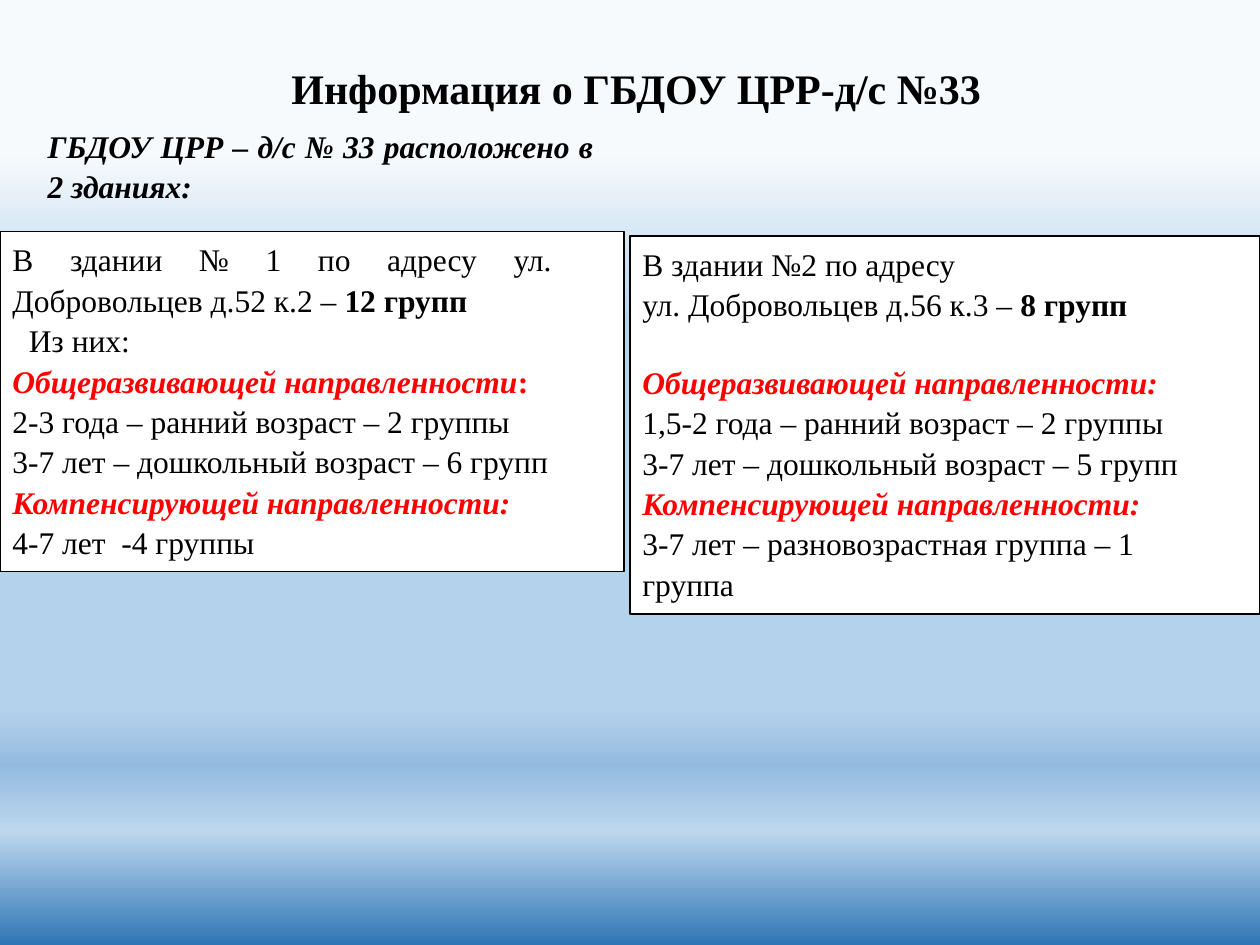
from dataclasses import dataclass

from lxml.etree import SubElement
from pptx import Presentation
from pptx.dml.color import RGBColor
from pptx.enum.shapes import MSO_SHAPE
from pptx.enum.text import MSO_ANCHOR, MSO_AUTO_SIZE, PP_ALIGN
from pptx.oxml.ns import qn
from pptx.util import Inches, Pt


@dataclass(frozen=True)
class Theme:
    """Colours, type sizes and spacing of the deck."""
    font: str = "Times New Roman"
    ink: str = "000000"
    accent: str = "FF0000"
    paper: str = "FFFFFF"
    title_size: int = 24
    body_size: int = 18
    line_spacing: float = 1.07
    group_gap: int = 21
    right_inset: float = 0.57
    sky: tuple = ((16, "F7FAFD"), (34, "B5D2EC"), (75, "B5D2EC"),
                  (81, "94BBDF"), (88, "BDD7EE"), (100, "2E75B6"))


@dataclass(frozen=True)
class Box:
    """A region given as shares of the slide's width and height."""
    left: float
    top: float
    width: float
    height: float

    def on(self, deck):
        """Return the region's lengths on the deck's slides."""
        wide, high = deck.slide_width, deck.slide_height
        return (int(self.left * wide), int(self.top * high),
                int(self.width * wide), int(self.height * high))


@dataclass(frozen=True)
class Line:
    """One paragraph: its runs of (wording, style) and its layout."""
    runs: tuple
    justified: bool = False
    gap_before: int = 0
    indent: float = 0


THEME = Theme()
JUSTIFY = True


def paint_background(slide):
    """Fill the slide with the vertical sky gradient."""
    fill = slide.background.fill
    fill.gradient()
    fill.gradient_angle = 270
    stops = slide.element.find(".//" + qn("a:gsLst"))
    for stop in list(stops):
        stops.remove(stop)
    for share, colour in THEME.sky:
        stop = SubElement(stops, qn("a:gs"), pos=str(share * 1000))
        SubElement(stop, qn("a:srgbClr"), val=colour)


def add_span(para, wording, style, size):
    """Add one run; style letters are b bold, i italic, r red."""
    span = para.add_run()
    span.text = wording
    font = span.font
    font.name, font.size = THEME.font, Pt(size)
    font.bold, font.italic = "b" in style, "i" in style
    font.color.rgb = RGBColor.from_string(THEME.accent if "r" in style else THEME.ink)


def write_lines(frame, lines):
    """Write body paragraphs into a wrapping text frame."""
    frame.word_wrap = True
    frame.auto_size = MSO_AUTO_SIZE.SHAPE_TO_FIT_TEXT
    frame.vertical_anchor = MSO_ANCHOR.TOP
    frame.margin_right = Inches(THEME.right_inset)
    for index, line in enumerate(lines):
        para = frame.add_paragraph() if index else frame.paragraphs[0]
        para.alignment = PP_ALIGN.JUSTIFY if line.justified else PP_ALIGN.LEFT
        para.line_spacing = THEME.line_spacing
        para.space_before = Pt(line.gap_before)
        if line.indent:
            para._p.get_or_add_pPr().set("marL", str(Inches(line.indent)))
        for wording, style in line.runs:
            add_span(para, wording, style, THEME.body_size)


def add_title(deck, slide, box, wording):
    """Place the centred one-line title."""
    frame = slide.shapes.add_textbox(*box.on(deck)).text_frame
    frame.word_wrap = False
    frame.auto_size = MSO_AUTO_SIZE.SHAPE_TO_FIT_TEXT
    para = frame.paragraphs[0]
    para.alignment = PP_ALIGN.CENTER
    add_span(para, wording, "b", THEME.title_size)


def add_lead(deck, slide, box, wording):
    """Place the introductory sentence."""
    frame = slide.shapes.add_textbox(*box.on(deck)).text_frame
    write_lines(frame, [Line(((wording, "bi"),), JUSTIFY)])


def add_building(deck, slide, box, lines):
    """Place the outlined card of one building."""
    card = slide.shapes.add_shape(MSO_SHAPE.RECTANGLE, *box.on(deck))
    card.shadow.inherit = False
    card.fill.solid()
    card.fill.fore_color.rgb = RGBColor.from_string(THEME.paper)
    card.line.color.rgb = RGBColor.from_string(THEME.ink)
    card.line.width = Pt(1)
    write_lines(card.text_frame, lines)


FIRST_BUILDING = (
    Line((("В здании № 1 по адресу ул. Добровольцев д.52 к.2 – ", ""),
          ("12 групп", "b")), JUSTIFY),
    Line((("Из них:", ""),), JUSTIFY, indent=0.13),
    Line((("Общеразвивающей направленности", "bir"), (":", "br")), JUSTIFY),
    Line((("2-3 года – ранний возраст – 2 группы", ""),), JUSTIFY),
    Line((("3-7 лет – дошкольный возраст – 6 групп", ""),), JUSTIFY),
    Line((("Компенсирующей направленности:", "bir"),)),
    Line((("4-7 лет  -4 группы", ""),)),
)
SECOND_BUILDING = (
    Line((("В здании №2 по адресу", ""),)),
    Line((("ул. Добровольцев д.56 к.3 – ", ""), ("8 групп", "b"))),
    Line((("Общеразвивающей направленности:", "bir"),), gap_before=THEME.group_gap),
    Line((("1,5-2 года – ранний возраст – 2 группы", ""),)),
    Line((("3-7 лет – дошкольный возраст – 5 групп", ""),), JUSTIFY),
    Line((("Компенсирующей направленности:", "bir"),)),
    Line((("3-7 лет – разновозрастная группа – 1 группа", ""),)),
)


def main():
    """Build the slide and save the deck."""
    deck = Presentation()
    deck.slide_width, deck.slide_height = Inches(10), Inches(7.5)
    slide = deck.slides.add_slide(deck.slide_layouts[6])
    paint_background(slide)
    add_title(deck, slide, Box(0.22, 0.06, 0.57, 0.07), "Информация о ГБДОУ ЦРР-д/с №33")
    add_building(deck, slide, Box(0, 0.245, 0.495, 0.36), FIRST_BUILDING)
    add_lead(deck, slide, Box(0.028, 0.125, 0.5, 0.1),
             "ГБДОУ ЦРР – д/с № 33 расположено в 2 зданиях:")
    add_building(deck, slide, Box(0.5, 0.25, 0.5, 0.4), SECOND_BUILDING)
    deck.save("out.pptx")


if __name__ == "__main__":
    main()
